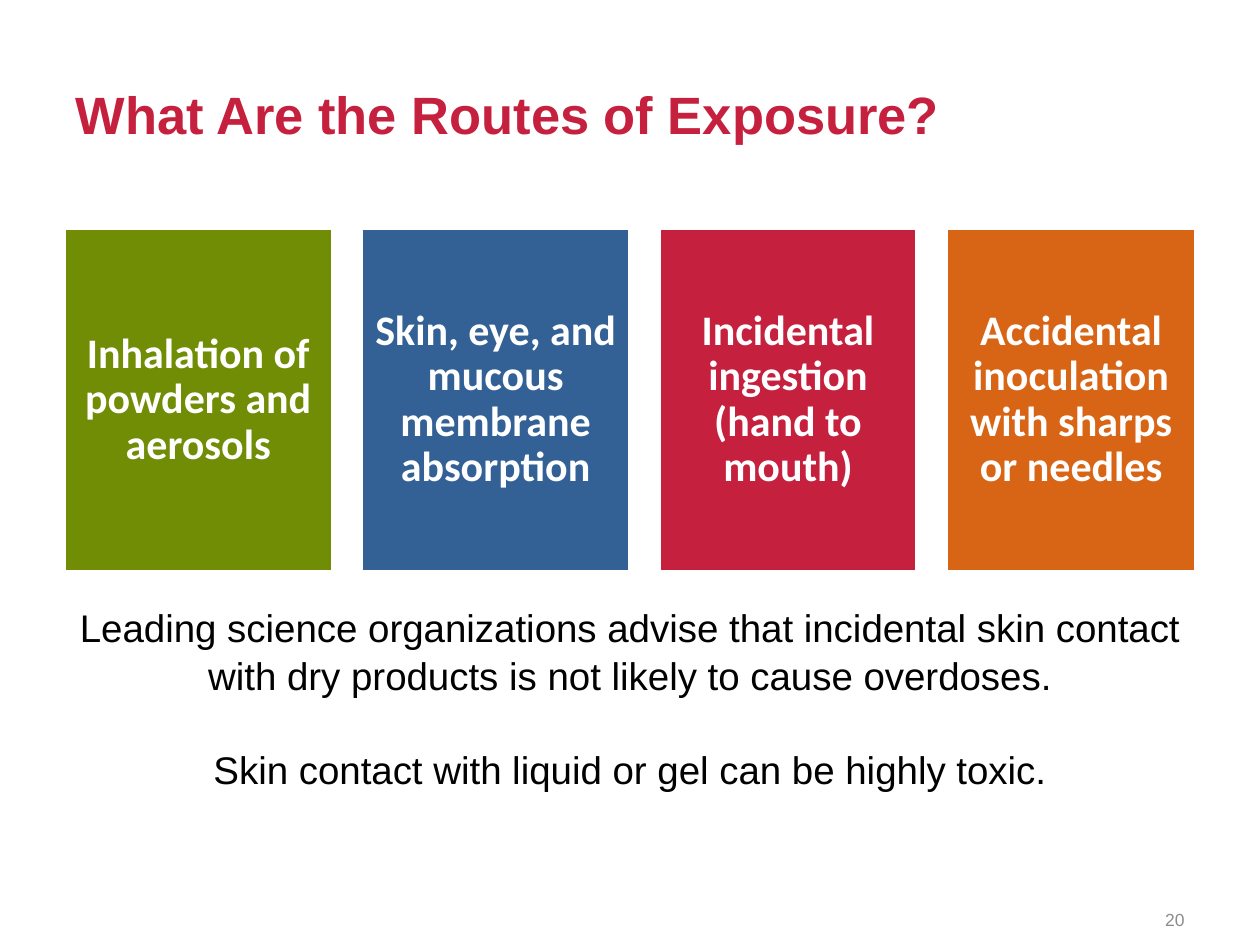
from pptx import Presentation
from pptx.dml.color import RGBColor
from pptx.enum import shapes, text
from pptx.util import Pt

HUES = {
    "red": "C5203E", "green": "708D05", "blue": "346195",
    "orange": "D86516", "white": "FFFFFF", "black": "000100", "gray": "8C8C8C",
}
LEFT, MID, RIGHT = text.PP_ALIGN.LEFT, text.PP_ALIGN.CENTER, text.PP_ALIGN.RIGHT


def write(frame, lines, align, hue, look, space=1.0, anchor=text.MSO_ANCHOR.MIDDLE):
    """Fill a text frame with one paragraph per line, all in one format."""
    frame.word_wrap = True
    frame.auto_size = text.MSO_AUTO_SIZE.NONE
    frame.vertical_anchor = anchor
    for i, line in enumerate(lines):
        para = frame.add_paragraph() if i else frame.paragraphs[0]
        para.alignment = align
        para.line_spacing = space
        run = para.add_run()
        run.text = line
        run.font.color.rgb = RGBColor.from_string(HUES[hue])
        for key, value in look.items():
            setattr(run.font, key, value)


deck = Presentation()
deck.slide_width, deck.slide_height = Pt(720), Pt(540)
slide = deck.slides.add_slide(deck.slide_layouts[5])

# Title
title = slide.shapes.title
place = {"left": 36, "top": 49, "width": 648, "height": 38}
for key, value in place.items():
    setattr(title, key, Pt(value))
write(title.text_frame, ["What Are the Routes of Exposure?"], LEFT, "red",
      {"name": "Arial", "size": Pt(30), "bold": True}, 0.8)

# Row of route cards, with equal gaps
routes = [
    ("Inhalation of powders and aerosols", "green", 153.2),
    ("Skin, eye, and mucous membrane absorption", "blue", 153.2),
    ("Incidental ingestion (hand to mouth)", "red", 147.6),
    ("Accidental inoculation with sharps or needles", "orange", 142.6),
]
gap = 16.7
x = 36.7
for label, hue, width in routes:
    card = slide.shapes.add_shape(
        shapes.MSO_SHAPE.RECTANGLE, Pt(x), Pt(130.3), Pt(width), Pt(196.6))
    card.shadow.inherit = False
    card.fill.solid()
    card.fill.fore_color.rgb = RGBColor.from_string(HUES[hue])
    card.line.color.rgb = RGBColor.from_string(HUES["white"])
    card.line.width = Pt(2)
    frame = card.text_frame
    for side in ("left", "right", "top", "bottom"):
        setattr(frame, "margin_" + side, Pt(7.2))
    write(frame, [label], MID, "white",
          {"name": "Calibri", "size": Pt(24), "bold": True}, 0.9)
    x += width + gap

# Advice
advice = slide.shapes.add_textbox(Pt(36), Pt(340.6), Pt(648), Pt(113.8)).text_frame
write(advice, [
    "Leading science organizations advise that incidental skin contact "
    "with dry products is not likely to cause overdoses.",
    "Skin contact with liquid or gel can be highly toxic.",
], MID, "black", {"name": "Arial", "size": Pt(22)}, 1.04, text.MSO_ANCHOR.TOP)
advice.paragraphs[1].space_before = Pt(26.3)

# Slide number
number = slide.shapes.add_textbox(Pt(516), Pt(511.2), Pt(168), Pt(28.8))
write(number.text_frame, ["20"], RIGHT, "gray", {"name": "Arial", "size": Pt(10)})

deck.save("out.pptx")
